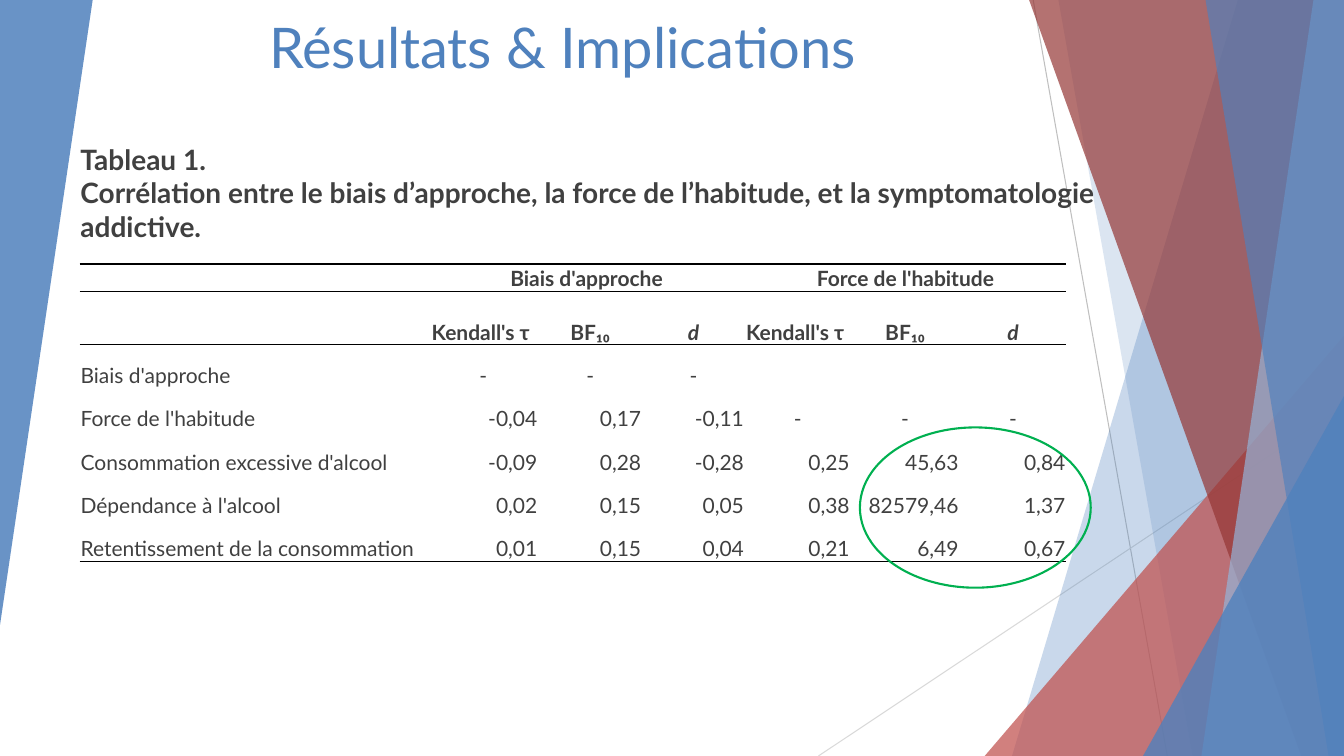
import dataclasses

import lxml.etree
import pptx
import pptx.dml.color
import pptx.enum.shapes
import pptx.enum.text
import pptx.oxml.ns
import pptx.util

Pt = pptx.util.Pt
Align = pptx.enum.text.PP_ALIGN
Anchor = pptx.enum.text.MSO_ANCHOR
Preset = pptx.enum.shapes.MSO_SHAPE
qn = pptx.oxml.ns.qn


@dataclasses.dataclass(frozen=True)
class Theme:
    font: str = "Lato"
    blue: str = "4F81BD"
    pale_blue: str = "95B3D7"
    red: str = "C0504D"
    dark_red: str = "953735"
    green: str = "00B050"
    ink: str = "404040"
    rule: str = "000000"
    gray: str = "BFBFBF"
    light_gray: str = "D9D9D9"
    title_size: int = 40
    caption_size: int = 20
    table_size: int = 15


THEME = Theme()
WIDTH, HEIGHT = 960, 540

HEADINGS = ["Kendall's τ ", "BF₁₀", "d"]
CORRELATIONS = [
    ["", "Biais d'approche", "", "", "Force de l'habitude", "", ""],
    ["", *HEADINGS, *HEADINGS],
    ["Biais d'approche", "-", "-", "-", "", "", ""],
    ["Force de l'habitude", "-0,04", "0,17", "-0,11", "-", "-", "-"],
    ["Consommation excessive d'alcool", "-0,09", "0,28", "-0,28", "0,25", "45,63", "0,84"],
    ["Dépendance à l'alcool", "0,02", "0,15", "0,05", "0,38", "82579,46", "1,37"],
    ["Retentissement de la consommation", "0,01", "0,15", "0,04", "0,21", "6,49", "0,67"],
]
HEADER_ROWS = 2
COLUMN_WIDTHS = [249.1, 78.5, 74.2, 73.4, 75.6, 77.8, 76.3]
ROW_HEIGHTS = [19.4, 38.2] + [31] * 5
RULED_EDGES = {0, 1, HEADER_ROWS, len(CORRELATIONS)}


class SlideBuilder:
    def __init__(self, slide, theme):
        self.slide = slide
        self.shapes = slide.shapes
        self.theme = theme

    def rgb(self, color):
        return pptx.dml.color.RGBColor.from_string(color)

    def paint(self, shape, color, opacity):
        shape.shadow.inherit = False
        shape.line.fill.background()
        shape.fill.solid()
        shape.fill.fore_color.rgb = self.rgb(color)
        tint = shape.fill._xPr.find(".//" + qn("a:srgbClr"))
        lxml.etree.SubElement(tint, qn("a:alpha")).set("val", str(opacity * 1000))

    def style(self, paragraph, size, color, align=Align.LEFT, bold=False, italic=False):
        paragraph.alignment = align
        font = paragraph.font
        font.name, font.size = self.theme.font, Pt(size)
        font.bold, font.italic = bold, italic
        font.color.rgb = self.rgb(color)

    def line(self, x1, y1, x2, y2, color):
        ray = self.shapes.add_connector(
            pptx.enum.shapes.MSO_CONNECTOR.STRAIGHT, Pt(x1), Pt(y1), Pt(x2), Pt(y2))
        ray.line.color.rgb = self.rgb(color)
        ray.line.width = Pt(0.75)
        lxml.etree.SubElement(ray._element.spPr, qn("a:effectLst"))

    def band(self, top_x, bottom_x, color, opacity):
        outline = self.shapes.build_freeform(Pt(top_x), 0)
        outline.add_line_segments(
            [(Pt(WIDTH), 0), (Pt(WIDTH), Pt(HEIGHT)), (Pt(bottom_x), Pt(HEIGHT))], close=True)
        self.paint(outline.convert_to_shape(), color, opacity)

    def triangle(self, x, y, width, height, color, opacity, rotation=0):
        wedge = self.shapes.add_shape(
            Preset.ISOSCELES_TRIANGLE, Pt(x), Pt(y), Pt(width), Pt(height))
        wedge.adjustments[0] = 1
        wedge.rotation = rotation
        self.paint(wedge, color, opacity)

    def ellipse(self, x, y, width, height, color):
        ring = self.shapes.add_shape(Preset.OVAL, Pt(x), Pt(y), Pt(width), Pt(height))
        ring.shadow.inherit = False
        ring.fill.background()
        ring.line.color.rgb = self.rgb(color)
        ring.line.width = Pt(1.5)

    def text(self, x, y, width, height, lines, size, color, align=Align.LEFT,
             bold=False, anchor=Anchor.TOP, bottom=3.6):
        frame = self.shapes.add_textbox(Pt(x), Pt(y), Pt(width), Pt(height)).text_frame
        frame.word_wrap = True
        frame.vertical_anchor = anchor
        frame.margin_bottom = Pt(bottom)
        frame.text = "\n".join(lines)
        for paragraph in frame.paragraphs:
            self.style(paragraph, size, color, align, bold)

    def border(self, cell, side, ruled):
        edge = lxml.etree.Element(qn("a:" + side), w=str(Pt(1)))
        if ruled:
            fill = lxml.etree.SubElement(edge, qn("a:solidFill"))
            lxml.etree.SubElement(fill, qn("a:srgbClr")).set("val", self.theme.rule)
        else:
            lxml.etree.SubElement(edge, qn("a:noFill"))
        cell._tc.get_or_add_tcPr().insert(0, edge)

    def cell(self, cell, row, column, value):
        header = row < HEADER_ROWS
        if column == 0:
            align = Align.LEFT
        elif header or value == "-":
            align = Align.CENTER
        else:
            align = Align.RIGHT
        cell.text = value
        cell.vertical_anchor = Anchor.BOTTOM
        cell.margin_left = cell.margin_right = cell.margin_top = Pt(0.7)
        cell.margin_bottom = 0
        cell.fill.background()
        paragraph = cell.text_frame.paragraphs[0]
        self.style(paragraph, self.theme.table_size, self.theme.ink, align, header, value == "d")
        if not value:
            paragraph._p.get_or_add_endParaRPr().set("sz", str(self.theme.table_size * 100))
        self.border(cell, "lnB", row + 1 in RULED_EDGES)
        self.border(cell, "lnT", row in RULED_EDGES)
        self.border(cell, "lnR", False)
        self.border(cell, "lnL", False)

    def table(self, x, y, rows, widths, heights):
        table = self.shapes.add_table(
            len(rows), len(widths), Pt(x), Pt(y), Pt(sum(widths)), Pt(sum(heights))).table
        table.first_row = table.horz_banding = False
        for column, width in zip(table.columns, widths):
            column.width = Pt(width)
        for row, height in zip(table.rows, heights):
            row.height = Pt(height)
        for r, values in enumerate(rows):
            for c, value in enumerate(values):
                self.cell(table.cell(r, c), r, c, value)
        for first in (1, 4):
            table.cell(0, first).merge(table.cell(0, first + 2))


def main():
    deck = pptx.Presentation()
    deck.slide_width, deck.slide_height = Pt(WIDTH), Pt(HEIGHT)
    results = SlideBuilder(deck.slides.add_slide(deck.slide_layouts[6]), THEME)

    results.line(738, 0, 833.8, HEIGHT, THEME.gray)
    results.line(WIDTH, 290, 584.6, HEIGHT, THEME.light_gray)
    results.band(884.2, 722.9, THEME.blue, 30)
    results.band(756, 851.8, THEME.blue, 20)
    results.triangle(703.4, 239.8, 256.6, 300.2, THEME.red, 72)
    results.band(735.1, 929.5, THEME.dark_red, 70)
    results.band(938.2, 858.2, THEME.pale_blue, 70)
    results.band(861.1, 949, THEME.blue, 65)
    results.triangle(816.5, 283, 143.5, 257, THEME.blue, 80)
    results.triangle(0, 0, 66.2, 446.4, THEME.blue, 85, rotation=180)

    results.text(50.4, 97.9, 741.6, 128.2, [
        "Tableau 1.",
        "Corrélation entre le biais d’approche, la force de l’habitude, "
        "et la symptomatologie addictive.",
    ], THEME.caption_size, THEME.ink, bold=True)
    results.table(56.9, 188.6, CORRELATIONS, COLUMN_WIDTHS, ROW_HEIGHTS)
    results.ellipse(614.2, 305.3, 164.9, 114.5, THEME.green)
    results.text(61.9, 0, 679.7, 108.7, ["Résultats & Implications"], THEME.title_size,
                 THEME.blue, Align.CENTER, anchor=Anchor.BOTTOM, bottom=51.6)
    deck.save("out.pptx")


if __name__ == "__main__":
    main()
